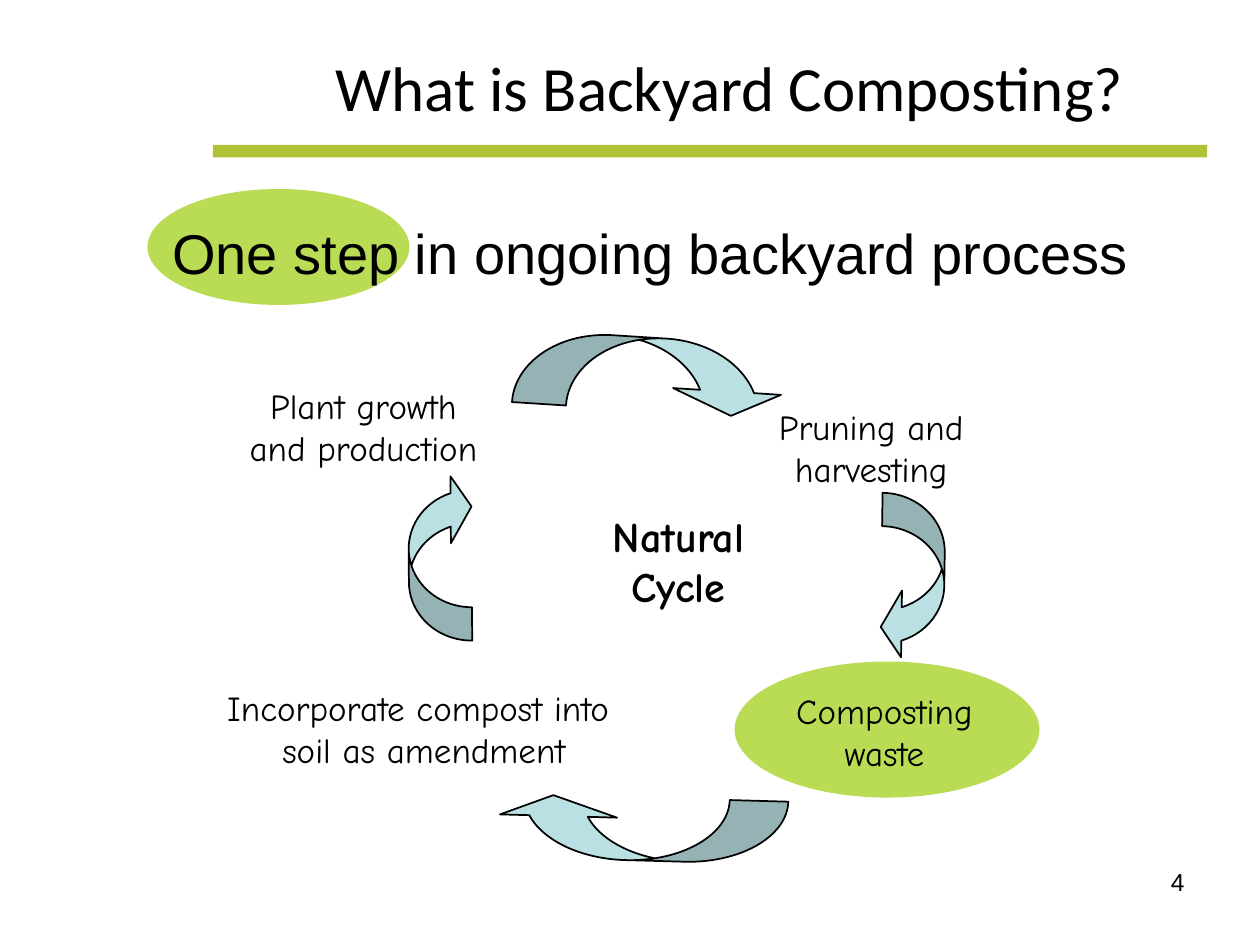
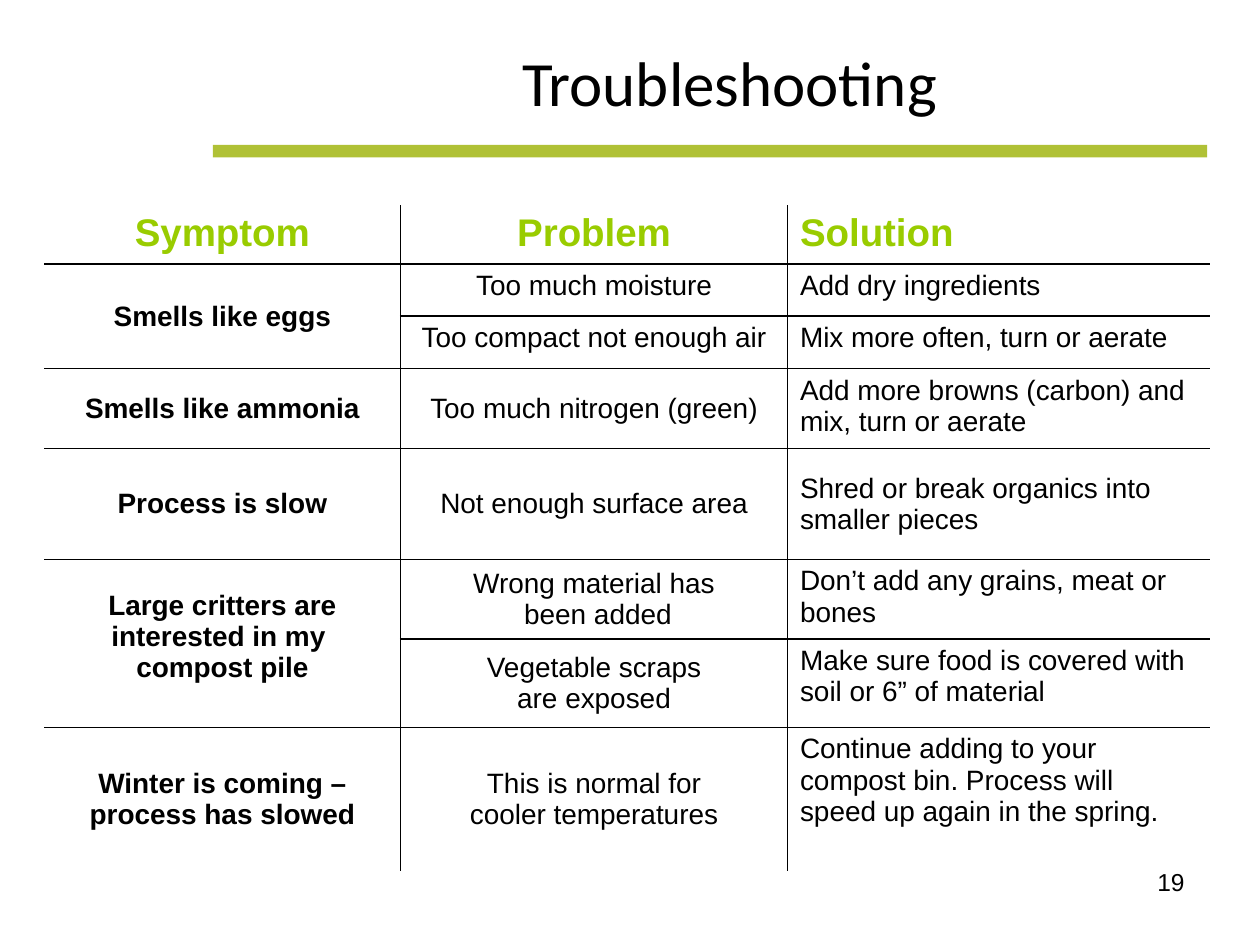
from dataclasses import dataclass
from typing import NamedTuple

from lxml import etree
from pptx import Presentation, util as u
from pptx.dml.color import RGBColor
from pptx.enum import shapes, text
from pptx.oxml import ns

EMU_PER_PX = 9144  # 100 px to the inch


@dataclass(frozen=True)
class Theme:
    ink: str = "000000"
    band: str = "B0C136"
    accent: str = "99CC00"
    arrow: str = "BBE0E3"
    heading_font: str = "Calibri"
    body_font: str = "Arial"
    hand_font: str = "Comic Neue"
    heading_size: int = 36
    statement_size: int = 32
    centre_size: int = 24
    column_size: int = 22
    caption_size: int = 20
    cell_size: int = 16
    number_size: int = 14
    line_width: int = 1
    highlight_alpha: int = 67


THEME = Theme()


class Box(NamedTuple):
    left: int
    top: int
    width: int
    height: int


class Caption(NamedTuple):
    words: str
    box: Box
    font: str = THEME.hand_font
    size: int = THEME.caption_size
    bold: bool = False
    anchor: text.MSO_ANCHOR = text.MSO_ANCHOR.TOP
    align: text.PP_ALIGN = text.PP_ALIGN.CENTER


class CycleArrow(NamedTuple):
    box: Box
    rotation: float
    thickness: float


class Remedy(NamedTuple):
    """One table row; an empty symptom continues the one above."""
    height: int
    symptom: str
    problem: str
    solution: str
    problem_anchor: text.MSO_ANCHOR = text.MSO_ANCHOR.MIDDLE
    solution_anchor: text.MSO_ANCHOR = text.MSO_ANCHOR.TOP


BAND = Box(169, 115, 789, 10)
PAGE_NUMBER = Box(717, 683, 233, 52)

STATEMENT = Caption("One step in ongoing backyard process", Box(75, 150, 883, 100),
                    THEME.body_font, THEME.statement_size, anchor=text.MSO_ANCHOR.MIDDLE)
HIGHLIGHTS = [Box(117, 150, 208, 92), Box(583, 525, 242, 108)]
STAGES = [
    Caption("Plant growth\nand production", Box(183, 300, 211, 77)),
    Caption("Pruning and\nharvesting", Box(608, 317, 167, 77)),
    Caption("Composting\nwaste", Box(619, 542, 166, 77)),
    Caption("Incorporate compost into \nsoil as amendment", Box(157, 540, 359, 77)),
    Caption("Natural\nCycle", Box(467, 400, 143, 90), size=THEME.centre_size, bold=True),
]
ARROWS = [
    CycleArrow(Box(408, 268, 217, 58), 183.6, 0.74),
    CycleArrow(Box(658, 433, 133, 50), 270.8, 0.53),
    CycleArrow(Box(392, 633, 233, 50), 1.6, 0.93),
    CycleArrow(Box(283, 417, 133, 50), 89.7, 0.53),
]

TABLE_LEFT, TABLE_TOP = 35, 163
COLUMN_WIDTHS = [283, 307, 335]
COLUMN_ALIGNS = [text.PP_ALIGN.CENTER, text.PP_ALIGN.CENTER, text.PP_ALIGN.LEFT]
TOP, MIDDLE = text.MSO_ANCHOR.TOP, text.MSO_ANCHOR.MIDDLE
REMEDIES = [
    Remedy(46, "Symptom", "Problem", "Solution", TOP),
    Remedy(41, "Smells like eggs", "Too much moisture", "Add dry ingredients", TOP),
    Remedy(42, "", "Too compact not enough air", "Mix more often, turn or aerate", TOP),
    Remedy(62, "Smells like ammonia", "Too much nitrogen (green)",
           "Add more browns (carbon) and mix, turn or aerate"),
    Remedy(88, "Process is slow", "Not enough surface area",
           "Shred or break organics into smaller pieces", MIDDLE, MIDDLE),
    Remedy(60, "Large critters are interested in my \vcompost pile",
           "Wrong material has\v been added", "Don’t add any grains, meat or bones"),
    Remedy(70, "", "Vegetable scraps\vare exposed",
           "Make sure food is covered with soil or 6” of material"),
    Remedy(114, "Winter is coming – process has slowed",
           "This is normal for\vcooler temperatures",
           "Continue adding to your compost bin. Process will speed up again in the spring."),
]


def px(length: int) -> u.Emu:
    return u.Emu(length * EMU_PER_PX)


def emu(box: Box) -> list[u.Emu]:
    return [px(length) for length in box]


def rgb(colour: str) -> RGBColor:
    return RGBColor.from_string(colour)


def write(frame, words: str, font: str, size: int, align: text.PP_ALIGN,
          bold: bool = False, colour: str = THEME.ink) -> None:
    frame.text = words
    for paragraph in frame.paragraphs:
        paragraph.alignment = align
        paragraph.font.name = font
        paragraph.font.size = u.Pt(size)
        paragraph.font.bold = bold
        paragraph.font.color.rgb = rgb(colour)


def add_caption(slide, caption: Caption) -> None:
    frame = slide.shapes.add_textbox(*emu(caption.box)).text_frame
    frame.word_wrap = True
    frame.vertical_anchor = caption.anchor
    write(frame, caption.words, caption.font, caption.size, caption.align, caption.bold)


def add_filled(slide, kind: shapes.MSO_SHAPE, box: Box, colour: str):
    shape = slide.shapes.add_shape(kind, *emu(box))
    shape.shadow.inherit = False
    shape.fill.solid()
    shape.fill.fore_color.rgb = rgb(colour)
    shape.line.fill.background()
    return shape


def add_highlight(slide, box: Box) -> None:
    oval = add_filled(slide, shapes.MSO_SHAPE.OVAL, box, THEME.accent)
    colour = oval.fill._xPr.find(".//" + ns.qn("a:srgbClr"))
    etree.SubElement(colour, ns.qn("a:alpha"), val=str(THEME.highlight_alpha * 1000))


def add_cycle_arrow(slide, arrow: CycleArrow) -> None:
    shape = add_filled(slide, shapes.MSO_SHAPE.CURVED_UP_ARROW, arrow.box, THEME.arrow)
    shape.line.color.rgb = rgb(THEME.ink)
    shape.line.width = u.Pt(THEME.line_width)
    shape.rotation = arrow.rotation
    shape._element.spPr.get_or_add_xfrm().set("flipH", "1")
    for index, amount in enumerate([arrow.thickness, 2 * arrow.thickness, 0.33]):
        shape.adjustments[index] = amount


def start_slide(deck, heading: str, heading_top: int, number: int):
    """Add a slide with the shared heading, band and page number."""
    slide = deck.slides.add_slide(deck.slide_layouts.get_by_name("Title Only"))
    add_filled(slide, shapes.MSO_SHAPE.RECTANGLE, BAND, THEME.band)
    title = slide.shapes.title
    title.left, title.top, title.width, title.height = emu(Box(200, heading_top, 758, 103))
    title.text_frame.auto_size = text.MSO_AUTO_SIZE.NONE
    title.text_frame.vertical_anchor = MIDDLE
    write(title.text_frame, heading, THEME.heading_font, THEME.heading_size,
          text.PP_ALIGN.CENTER)
    add_caption(slide, Caption(str(number), PAGE_NUMBER, THEME.body_font,
                               THEME.number_size, align=text.PP_ALIGN.RIGHT))
    return slide


def set_borders(cell, drawn: dict[str, bool]) -> None:
    """Rule the sides marked true and clear the rest, in L, R, T, B order."""
    properties = cell._tc.get_or_add_tcPr()
    for side, visible in drawn.items():
        line = etree.SubElement(properties, ns.qn(f"a:ln{side}"),
                                w=str(u.Pt(THEME.line_width)))
        if visible:
            fill = etree.SubElement(line, ns.qn("a:solidFill"))
            etree.SubElement(fill, ns.qn("a:srgbClr"), val=THEME.ink)
        else:
            etree.SubElement(line, ns.qn("a:noFill"))


def add_remedy_table(slide) -> None:
    heights = [remedy.height for remedy in REMEDIES]
    area = Box(TABLE_LEFT, TABLE_TOP, sum(COLUMN_WIDTHS), sum(heights))
    table = slide.shapes.add_table(len(heights), len(COLUMN_WIDTHS), *emu(area)).table
    table.first_row = table.horz_banding = False
    for column, width in zip(table.columns, COLUMN_WIDTHS):
        column.width = px(width)
    last_row, last_column = len(heights) - 1, len(COLUMN_WIDTHS) - 1

    for r, remedy in enumerate(REMEDIES):
        table.rows[r].height = px(remedy.height)
        header = r == 0
        anchors = [TOP if header else MIDDLE, remedy.problem_anchor, remedy.solution_anchor]
        words = [remedy.symptom, remedy.problem, remedy.solution]
        for c, (entry, anchor, align) in enumerate(zip(words, anchors, COLUMN_ALIGNS)):
            cell = table.cell(r, c)
            set_borders(cell, {"L": c > 0, "R": c < last_column, "T": r > 0, "B": r < last_row})
            cell.fill.background()
            cell.vertical_anchor = anchor
            if entry:
                write(cell.text_frame, entry, THEME.body_font,
                      THEME.column_size if header else THEME.cell_size, align,
                      bold=header or c == 0, colour=THEME.accent if header else THEME.ink)
        if not remedy.symptom:
            table.cell(r - 1, 0).merge(table.cell(r, 0))
            if "\v" in REMEDIES[r - 1].symptom:
                table.cell(r - 1, 0).margin_bottom = px(16)


def build_cycle_slide(deck) -> None:
    slide = start_slide(deck, "What is Backyard Composting?", 17, 4)
    for box in HIGHLIGHTS:
        add_highlight(slide, box)
    for caption in [STATEMENT, *STAGES]:
        add_caption(slide, caption)
    for arrow in ARROWS:
        add_cycle_arrow(slide, arrow)


def build_troubleshooting_slide(deck) -> None:
    add_remedy_table(start_slide(deck, "Troubleshooting", 13, 19))


def main() -> None:
    deck = Presentation()
    deck.slide_width, deck.slide_height = px(1000), px(750)
    build_cycle_slide(deck)
    build_troubleshooting_slide(deck)
    deck.save("out.pptx")


if __name__ == "__main__":
    main()
